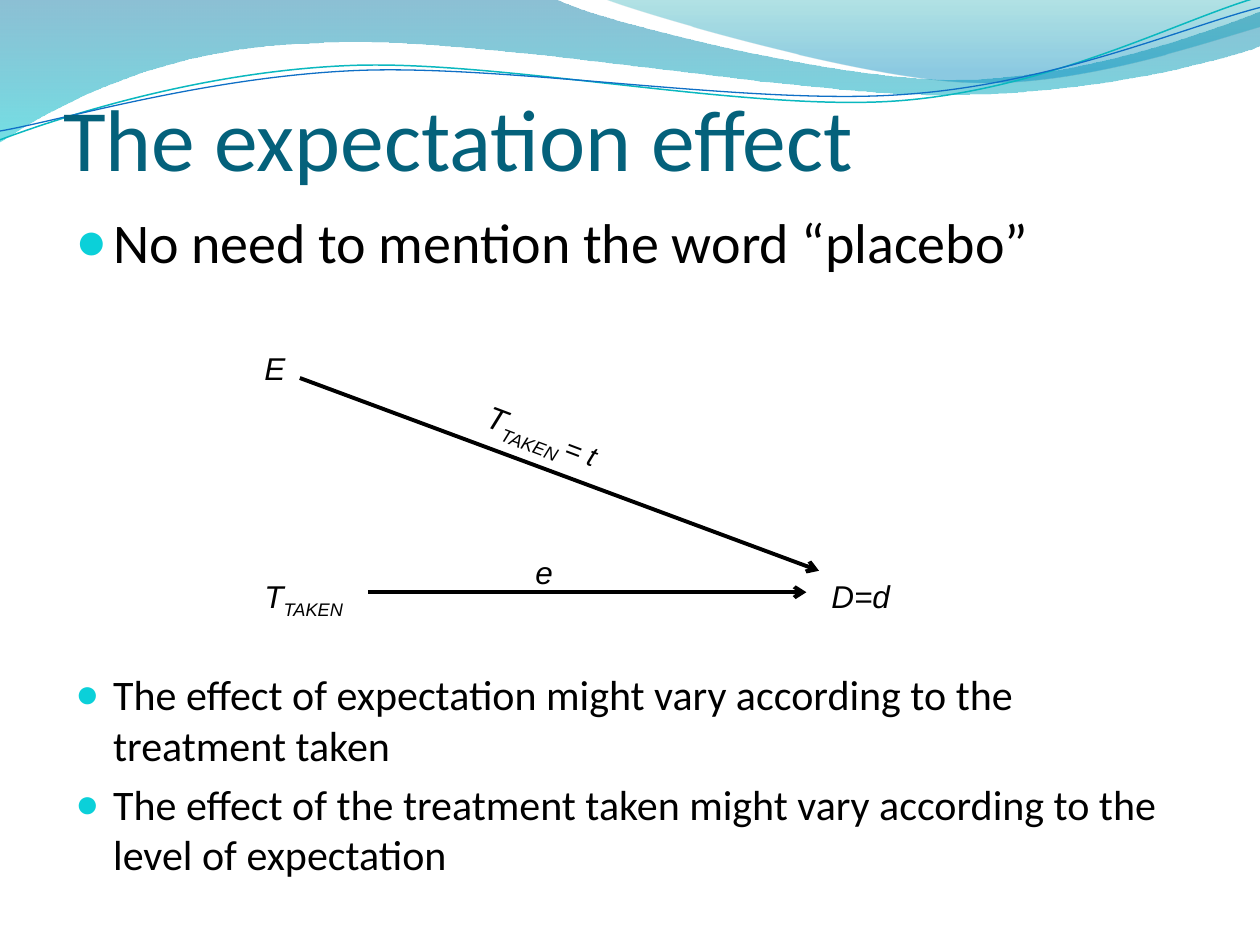
from math import cos, radians, sin

from lxml.etree import SubElement as Sub
from pptx import Presentation
from pptx.dml.color import RGBColor as RGB
from pptx.enum.shapes import MSO_CONNECTOR as Conn
from pptx.enum.text import MSO_ANCHOR as Anchor, MSO_AUTO_SIZE as Auto, PP_ALIGN as Align
from pptx.oxml.ns import qn
from pptx.util import Inches, Pt

HUES = {"title": "04617B", "text": "000000", "dot": "0BD0D9",
        "teal": "0AB8BF", "blue": "0F6FC6"}

# Content
TITLE = "The expectation effect"
LISTS = [  # top, height, size, items
    (1.6, 0.55, 32, ["No need to mention the word “placebo”"]),
    (5.26, 1.9, 24, [
        "The effect of expectation might vary according to the treatment taken",
        "The effect of the treatment taken might vary according to the level of expectation"]),
]
LABELS = [  # box, top inset, turn, wrap, runs of (text, size, subscript)
    ((2, 2.72, 0.77, 0.99), 0.05, 0, True, [("E", 18, False)]),
    ((6.5, 4.24, 1.25, 0.71), 0.34, 0, True, [("D=d", 18, False)]),
    ((3.76, 3.18, 2.28, 0.71), 0.34, 20.7, True,
     [("T", 18, False), ("TAKEN ", 18, True), ("= t", 16, False)]),
    ((2, 4.53, 1.53, 0.99), 0.05, 0, True, [("T", 18, False), ("TAKEN", 18, True)]),
    ((4.15, 4.34, 0.34, 0.4), 0.05, 0, False, [("e", 18, False)]),
]
ARROWS = [((2.38, 3), (6.5, 4.53)), ((2.92, 4.7), (6.4, 4.7))]

# Outlines: a pair is a corner, six numbers are a curve
BANDS = [  # outline, gradient stops of (position, colour, opacity)
    ([(0, 0), (4.4, -0.01), (4.76, 0.17, 6.64, 0.63, 7.58, 0.63),
      (8.53, 0.63, 9.58, 0.26, 10, 0.09), (10.01, 0.36),
      (9.83, 0.44, 8.7, 0.76, 7.46, 0.75), (6.22, 0.75, 3.82, 0.28, 2.57, 0.34),
      (1.29, 0.36, 0.46, 0.83, -0.01, 1.13), (0, 0)],
     [(0, "0074A1", 45), (1, "00C6CF", 55)]),
    ([(4.79, -0.01), (5.09, 0.11, 6.82, 0.62, 7.69, 0.65),
      (8.56, 0.69, 9.61, 0.32, 10, 0.21), (10, 0), (4.79, -0.01)],
     [(0, "00A1A9", 30), (0.8, "008BBF", 45)]),
]
WAVES = [  # outline, centre, colour, width
    ([(0, 1.11), (0.48, 0.93, 1.58, 0.57, 2.77, 0.52),
      (3.95, 0.47, 5.93, 0.89, 7.13, 0.8), (8.33, 0.71, 9.38, 0.15, 9.98, -0.02)],
     (4.99, 0.57), "teal", 0.85),
    ([(0, 1.04), (0.47, 0.96, 1.64, 0.61, 2.83, 0.56),
      (4.03, 0.51, 5.97, 0.84, 7.17, 0.75), (8.36, 0.67, 9.41, 0.21, 10, 0.06)],
     (5, 0.59), "blue", 0.75),
]
TILT = 2.7


def pairs(part):
    return list(zip(part[::2], part[1::2]))


def level(part, mid):
    """Turn the points of a part by TILT about mid."""
    c, s = cos(radians(TILT)), sin(radians(TILT))
    out = []
    for x, y in pairs(part):
        dx, dy = x - mid[0], y - mid[1]
        out += [mid[0] + dx * c - dy * s, mid[1] + dx * s + dy * c]
    return tuple(out)


def outline(path, close):
    pts = [(Inches(x), Inches(y)) for part in path for x, y in pairs(part)]
    pen = shapes.build_freeform(*pts[0])
    pen.add_line_segments(pts[1:], close=close)
    shape = pen.convert_to_shape()
    shape.shadow.inherit = False
    # Merge each three steps of a curve into one Bézier
    steps = iter(list(shape.element.iter(qn("a:lnTo"))))
    for part in path[1:]:
        step = next(steps)
        if len(part) == 6:
            root = step.getparent()
            curve = Sub(root, qn("a:cubicBezTo"))
            root.replace(step, curve)
            for node in (step, next(steps), next(steps)):
                curve.append(node[0])
                if node is not step:
                    root.remove(node)
    return shape


def style(obj, **vals):
    for name, val in vals.items():
        setattr(obj, name, val)


def write(para, text, size, face, hue="text", slant=False):
    run = para.add_run()
    run.text = text
    style(run.font, size=Pt(size), name=face, italic=slant)
    run.font.color.rgb = RGB.from_string(HUES[hue])
    return run


def textbox(box, **vals):
    frame = shapes.add_textbox(*map(Inches, box)).text_frame
    style(frame, **{"word_wrap": True, "auto_size": Auto.NONE, **vals})
    return frame


deck = Presentation()
style(deck, slide_width=Inches(10), slide_height=Inches(7.5))
slide = deck.slides.add_slide(deck.slide_layouts[5])
shapes = slide.shapes

# Wave decoration
for path, stops in BANDS:
    band = outline(path, True)
    band.line.fill.background()
    band.fill.gradient()
    band.fill.gradient_angle = 270
    for stop, (pos, hue, _) in zip(band.fill.gradient_stops, stops):
        stop.position = pos
        stop.color.rgb = RGB.from_string(hue)
    inks = list(band.element.spPr.iter(qn("a:srgbClr")))
    for ink, (_, _, clear) in zip(inks, stops):
        Sub(ink, qn("a:alpha"), val=str(clear * 1000))
for path, mid, hue, width in WAVES:
    wave = outline([level(part, mid) for part in path], False)
    wave.rotation = 360 - TILT
    wave.fill.background()
    wave.line.color.rgb = RGB.from_string(HUES[hue])
    wave.line.width = Pt(width)

# Title, in front of the waves
title = shapes.title
style(title, left=Inches(0.5), top=Inches(0.25), width=Inches(9), height=Inches(1.25))
style(title.text_frame, margin_left=0, margin_right=0, margin_bottom=0,
      vertical_anchor=Anchor.BOTTOM, auto_size=Auto.NONE)
head = title.text_frame.paragraphs[0]
head.alignment = Align.LEFT
write(head, TITLE, 50, "Calibri", "title")
title.element.getparent().append(title.element)

# Bullet lists
for top, high, size, items in LISTS:
    frame = textbox((0.5, top, 9, high))
    for i, item in enumerate(items):
        para = frame.add_paragraph() if i else frame.paragraphs[0]
        para.space_before = Pt(size * 0.2)
        write(para, item, size, "Calibri")
        props = para._p.get_or_add_pPr()
        props.set("marL", str(Inches(0.3)))
        props.set("indent", str(Inches(-0.3)))
        Sub(Sub(props, qn("a:buClr")), qn("a:srgbClr"), val=HUES["dot"])
        Sub(props, qn("a:buSzPct"), val="95000")
        Sub(props, qn("a:buFont"), typeface="Arial")
        Sub(props, qn("a:buChar"), char="●")

# Diagram arrows
for start, end in ARROWS:
    arrow = shapes.add_connector(Conn.STRAIGHT, *map(Inches, start + end))
    arrow.line.color.rgb = RGB.from_string(HUES["text"])
    arrow.line.width = Pt(2.25)
    Sub(arrow.element.spPr.find(qn("a:ln")), qn("a:tailEnd"), type="arrow")
    Sub(arrow.element.spPr, qn("a:effectLst"))

# Diagram labels
for box, inset, turn, wrap, runs in LABELS:
    frame = textbox(box, margin_top=Inches(inset), word_wrap=wrap)
    shapes[-1].rotation = turn
    for text, size, low in runs:
        run = write(frame.paragraphs[0], text, size, "Arial", slant=True)
        if low:
            run._r.get_or_add_rPr().set("baseline", "-25000")

deck.save("out.pptx")
